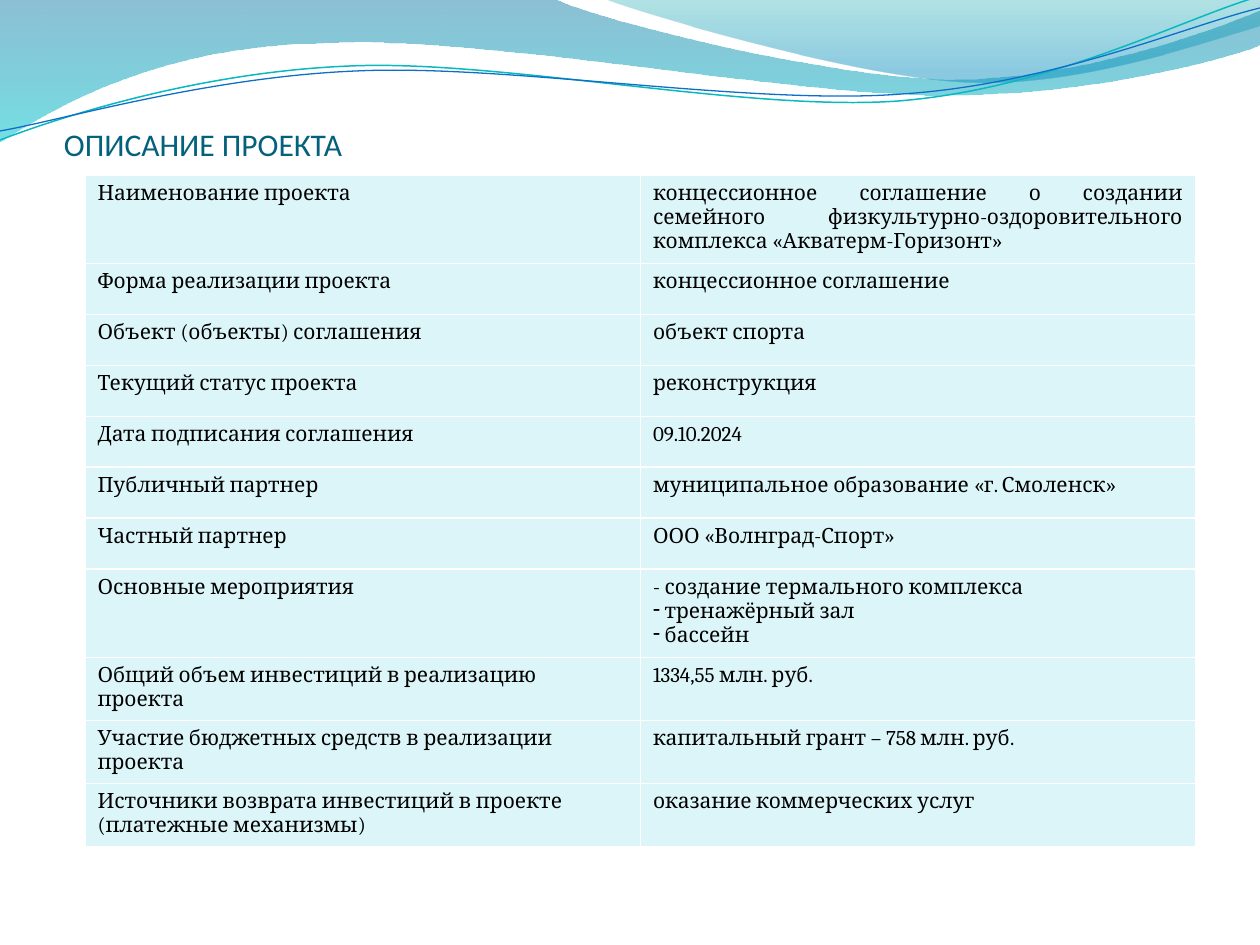
from lxml import etree
from pptx import Presentation
from pptx.dml.color import RGBColor
from pptx.enum.text import MSO_ANCHOR, PP_ALIGN
from pptx.oxml.ns import qn
from pptx.util import Emu, Pt

SCALE = 914400 / 126
BOTTOM = MSO_ANCHOR.BOTTOM
LEFT, JUSTIFY = PP_ALIGN.LEFT, PP_ALIGN.JUSTIFY

COLORS = {
    "title": "04617B",
    "text": "000000",
    "cell": "DBF5F9",
    "deep": "0074A1",
    "aqua": "00C6CF",
    "teal": "00A1A9",
    "azure": "008BBF",
    "teal_line": "0AB8BF",
    "blue_line": "0F6FC6",
}

FILLED_WAVES = [
    {
        "start": (0, 0),
        "segments": [
            [(554, -1)],
            [(600, 21), (837, 79), (955, 79)],
            [(1075, 79), (1207, 33), (1260, 11)],
            [(1261, 45)],
            [(1239, 55), (1096, 96), (940, 95)],
            [(784, 95), (481, 35), (324, 43)],
            [(163, 45), (58, 105), (-1, 142)],
        ],
        "stops": [("deep", 0, 45), ("aqua", 100, 55)],
    },
    {
        "start": (604, -1),
        "segments": [
            [(641, 14), (859, 78), (969, 82)],
            [(1079, 87), (1211, 40), (1260, 26)],
            [(1260, 0)],
        ],
        "stops": [("teal", 0, 30), ("azure", 80, 45)],
    },
]

LINE_WAVES = [
    {
        "start": (0, 140),
        "segments": [
            [(60, 117), (199, 72), (349, 66)],
            [(498, 59), (747, 112), (898, 101)],
            [(1050, 89), (1182, 19), (1257, -3)],
        ],
        "color": "teal_line",
        "width": 0.85,
    },
    {
        "start": (0, 131),
        "segments": [
            [(59, 121), (207, 77), (357, 71)],
            [(508, 64), (752, 106), (903, 94)],
            [(1053, 84), (1186, 26), (1260, 8)],
        ],
        "color": "blue_line",
        "width": 0.75,
    },
]

ROWS = [
    ("Наименование проекта",
     ["концессионное соглашение о создании семейного "
      "физкультурно-оздоровительного комплекса «Акватерм-Горизонт»"]),
    ("Форма реализации проекта", ["концессионное соглашение"]),
    ("Объект (объекты) соглашения", ["объект спорта"]),
    ("Текущий статус проекта", ["реконструкция"]),
    ("Дата подписания соглашения", ["09.10.2024"]),
    ("Публичный партнер", ["муниципальное образование «г. Смоленск»"]),
    ("Частный партнер", ["ООО «Волнград-Спорт»"]),
    ("Основные мероприятия",
     ["- создание термального комплекса", " тренажёрный зал", " бассейн"]),
    ("Общий объем инвестиций в реализацию проекта", ["1334,55 млн. руб."]),
    ("Участие бюджетных средств в реализации проекта",
     ["капитальный грант – 758 млн. руб."]),
    ("Источники возврата инвестиций в проекте (платежные механизмы)",
     ["оказание коммерческих услуг"]),
]


def px(value):
    return Emu(round(value * SCALE))


def rgb(name):
    return RGBColor.from_string(COLORS[name])


def set_attrs(obj, formats):
    for name, value in formats.items():
        setattr(obj, name, value)


def add_run(p, text, font, size, color):
    r = p.add_run()
    r.text = text
    set_attrs(r.font, {"name": font, "size": Pt(size), "bold": False})
    r.font.color.rgb = rgb(color)


def bend_segments(sp, segments):
    lines = iter(list(sp._element.iter(qn("a:lnTo"))))
    for segment in segments:
        nodes = [next(lines) for _ in segment]
        if len(segment) == 3:
            curve = etree.Element(qn("a:cubicBezTo"))
            nodes[0].addprevious(curve)
            for node in nodes:
                curve.append(node[0])
                node.getparent().remove(node)


def add_wave(slide, box, wave, close):
    left, top = box[:2]
    points = [wave["start"]] + sum(wave["segments"], [])
    points = [(px(left + x), px(top + y)) for x, y in points]
    builder = slide.shapes.build_freeform(*points[0])
    builder.add_line_segments(points[1:], close=close)
    sp = builder.convert_to_shape()
    bend_segments(sp, wave["segments"])
    sp.shadow.inherit = False
    return sp


def add_header(slide, box):
    for wave in FILLED_WAVES:
        sp = add_wave(slide, box, wave, True)
        sp.line.fill.background()
        sp.fill.gradient()
        sp.fill.gradient_angle = 270
        for stop, (color, position, _) in zip(sp.fill.gradient_stops, wave["stops"]):
            stop.color.rgb = rgb(color)
            stop.position = position / 100
        colors = sp._element.spPr.iter(qn("a:srgbClr"))
        for node, (_, _, alpha) in zip(list(colors), wave["stops"]):
            etree.SubElement(node, qn("a:alpha"), val=str(alpha * 1000))
    for wave in LINE_WAVES:
        sp = add_wave(slide, box, wave, False)
        sp.fill.background()
        sp.line.color.rgb = rgb(wave["color"])
        sp.line.width = Pt(wave["width"])


def add_title(slide, box, text):
    tf = slide.shapes.add_textbox(*map(px, box)).text_frame
    set_attrs(tf, {
        "word_wrap": True, "vertical_anchor": BOTTOM, "margin_left": 0,
        "margin_top": px(6), "margin_right": 0, "margin_bottom": 0,
    })
    add_run(tf.paragraphs[0], text, "Calibri", 18, "title")


def add_dash(p):
    pPr = p._p.get_or_add_pPr()
    pPr.set("marL", "0")
    pPr.set("indent", "0")
    etree.SubElement(pPr, qn("a:buFontTx"))
    etree.SubElement(pPr, qn("a:buChar"), char="-")


def fill_cell(cell, texts, align):
    cell.fill.solid()
    cell.fill.fore_color.rgb = rgb("cell")
    tf = cell.text_frame
    for i, text in enumerate(texts):
        p = tf.add_paragraph() if i else tf.paragraphs[0]
        p.alignment = align
        if i:
            add_dash(p)
        add_run(p, text, "Cambria", 12, "text")


def add_project_table(slide, box):
    table = slide.shapes.add_table(len(ROWS), 2, *map(px, box)).table
    table.horz_banding = False
    for i, (label, values) in enumerate(ROWS):
        fill_cell(table.cell(i, 0), [label], LEFT)
        fill_cell(table.cell(i, 1), values, JUSTIFY)


def main():
    prs = Presentation()
    set_attrs(prs, {"slide_width": px(1260), "slide_height": px(945)})
    slide = prs.slides.add_slide(prs.slide_layouts[6])
    add_header(slide, (0, 0, 1260, 144))
    add_title(slide, (64, 95, 349, 68), "ОПИСАНИЕ ПРОЕКТА")
    add_project_table(slide, (85, 175, 1111, 561))
    prs.save("out.pptx")


if __name__ == "__main__":
    main()
